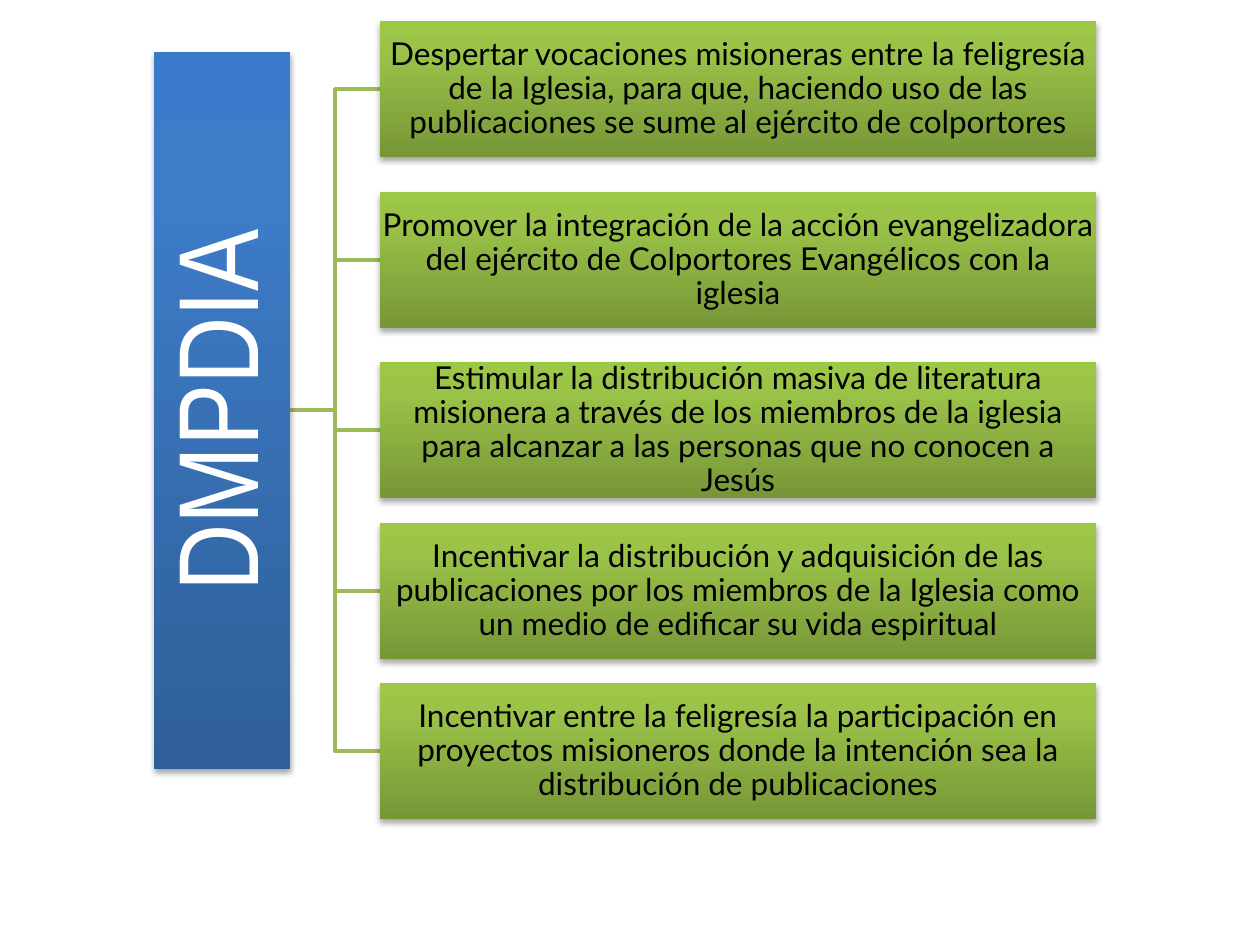
from lxml import etree
from pptx import Presentation
from pptx.dml.color import RGBColor
from pptx.enum.shapes import MSO_SHAPE
from pptx.enum.text import MSO_ANCHOR, PP_ALIGN
from pptx.oxml import parse_xml
from pptx.util import Pt

RECT = MSO_SHAPE.RECTANGLE
MIDDLE, CENTER = MSO_ANCHOR.MIDDLE, PP_ALIGN.CENTER
PX = 914400 // 126
NS = "http://schemas.openxmlformats.org/drawingml/2006/main"

# Content
HEAD = "DMPDIA"
GOALS = [
    (21, "Despertar vocaciones misioneras entre la feligresía de la Iglesia, para que, "
         "haciendo uso de las publicaciones se sume al ejército de colportores"),
    (192, "Promover la integración de la acción evangelizadora del ejército de "
          "Colportores Evangélicos con la iglesia"),
    (362, "Estimular la distribución masiva de literatura misionera a través de los "
          "miembros de la iglesia para alcanzar a las personas que no conocen a Jesús"),
    (523, "Incentivar la distribución y adquisición de las publicaciones por los "
          "miembros de la Iglesia como un medio de edificar su vida espiritual"),
    (683, "Incentivar entre la feligresía la participación en proyectos misioneros "
          "donde la intención sea la distribución de publicaciones"),
]
COLORS = {"line": "9BBB59", "light": "FFFFFF", "dark": "000000"}
BLUE = [(0, "2F5F99"), (80, "3D7CC7"), (100, "3A7CCB")]
GREEN = [(0, "779737"), (80, "9BC348"), (100, "9DC746")]

# Layout in px
BAR = (154, 52, 136, 717)
LEFT, WIDE, HIGH = 380, 716, 136


def shade(shape, stops):
    """Fill from bottom to top and cast a soft shadow below."""
    shape.line.fill.background()
    marks = "".join(f'<a:gs pos="{at * 1000}"><a:srgbClr val="{hue}"/></a:gs>'
                    for at, hue in stops)
    fill = parse_xml(f'<a:gradFill xmlns:a="{NS}" rotWithShape="1"><a:gsLst>{marks}</a:gsLst>'
                     '<a:lin ang="16200000" scaled="0"/></a:gradFill>')
    glow = parse_xml(f'<a:effectLst xmlns:a="{NS}"><a:outerShdw blurRad="40000" dist="23000" '
                     'dir="5400000" rotWithShape="0"><a:srgbClr val="000000">'
                     '<a:alpha val="35000"/></a:srgbClr></a:outerShdw></a:effectLst>')
    props = shape.element.spPr
    props.find(f"{{{NS}}}prstGeom").addnext(fill)
    etree.SubElement(props, "temp").getparent().replace(props[-1], glow)


def write(shape, text, size, font, color, inset, turn=None):
    frame = shape.text_frame
    frame.word_wrap = True
    frame.vertical_anchor = MIDDLE
    frame.margin_left = frame.margin_right = inset * PX
    frame.margin_top = frame.margin_bottom = inset * PX
    if turn:
        frame._txBody.bodyPr.set("vert", turn)
    para = frame.paragraphs[0]
    para.text = text
    para.alignment = CENTER
    para.line_spacing = 0.9
    para.font.size = Pt(size)
    para.font.name = font
    para.font.color.rgb = RGBColor.from_string(COLORS[color])


def block(shapes, box, stops, text, **style):
    shape = shapes.add_shape(RECT, *(n * PX for n in box))
    shade(shape, stops)
    write(shape, text, **style)


def branch(shapes, start, end):
    """Draw an elbow that bends halfway between two points."""
    (x1, y1), (x2, y2) = start, end
    bend = (x1 + x2) // 2
    pen = shapes.build_freeform(x1, y1, scale=PX)
    pen.add_line_segments([(bend, y1), (bend, y2), (x2, y2)], close=False)
    shape = pen.convert_to_shape()
    shape.shadow.inherit = False
    shape.fill.background()
    shape.line.width = Pt(2)
    shape.line.color.rgb = RGBColor.from_string(COLORS["line"])


def main():
    deck = Presentation()
    deck.slide_width, deck.slide_height = 1260 * PX, 945 * PX
    shapes = deck.slides.add_slide(deck.slide_layouts[6]).shapes

    # Branches, behind the blocks
    left, top, wide, high = BAR
    root = (left + wide, top + high // 2)
    for y, _ in reversed(GOALS):
        branch(shapes, root, (LEFT, y + HIGH // 2))

    # Head and goals
    block(shapes, BAR, BLUE, HEAD, size=65, font="Arial Narrow", color="light",
          inset=6, turn="vert270")
    for y, text in GOALS:
        block(shapes, (LEFT, y, WIDE, HIGH), GREEN, text, size=18, font="Lato",
              color="dark", inset=1)

    deck.save("out.pptx")


if __name__ == "__main__":
    main()
